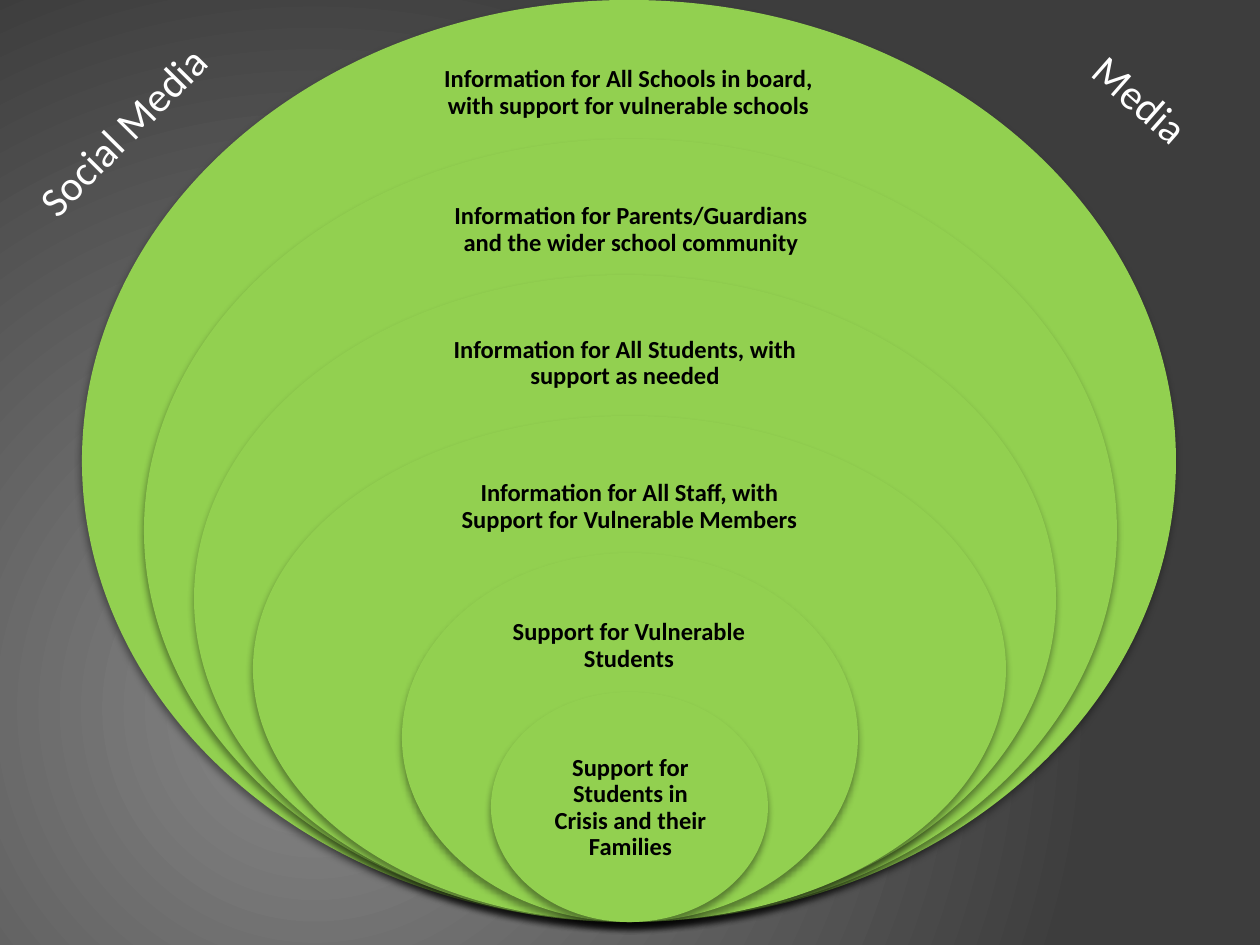
from dataclasses import dataclass

from lxml.etree import SubElement
from pptx import Presentation
from pptx.dml.color import RGBColor
from pptx.enum.shapes import MSO_SHAPE
from pptx.enum.text import MSO_ANCHOR, PP_ALIGN
from pptx.oxml.ns import qn
from pptx.util import Pt

EMU_PER_PX = 914400 / 126


@dataclass(frozen=True)
class Theme:
    font: str = "Calibri"
    glow: str = "878787"
    backdrop: str = "3D3D3D"
    ring: str = "92D050"
    ring_text: str = "000000"
    side_text: str = "FFFFFF"
    shadow: str = "000000"
    ring_size: int = 14
    side_size: int = 24


def px(length):
    return round(length * EMU_PER_PX)


class SlideBuilder:
    def __init__(self, page, theme):
        self.page = page
        self.theme = theme

    def background(self):
        """Radial gradient glowing from the lower left."""
        fill = self.page.background.fill
        fill.gradient()
        colours = (self.theme.glow, self.theme.backdrop)
        for position, (stop, colour) in enumerate(zip(fill.gradient_stops, colours)):
            stop.position = position
            stop.color.rgb = RGBColor.from_string(colour)
        gradient = next(self.page.element.iter(qn("a:gradFill")))
        gradient.remove(gradient.find(qn("a:lin")))
        circle = SubElement(gradient, qn("a:path"), path="circle")
        SubElement(circle, qn("a:fillToRect"), l="50000", t="100000", r="100000", b="50000")

    def ring(self, left, top, width, height):
        ellipse = self.page.shapes.add_shape(
            MSO_SHAPE.OVAL, px(left), px(top), px(width), px(height))
        ellipse.fill.solid()
        ellipse.fill.fore_color.rgb = RGBColor.from_string(self.theme.ring)
        ellipse.line.fill.background()
        ellipse.shadow.inherit = False
        effects = ellipse.element.spPr.find(qn("a:effectLst"))
        shadow = SubElement(effects, qn("a:outerShdw"), blurRad=str(Pt(4)),
                            dist=str(Pt(3.3)), dir="5400000", rotWithShape="0")
        colour = SubElement(shadow, qn("a:srgbClr"), val=self.theme.shadow)
        SubElement(colour, qn("a:alpha"), val="40000")

    def text(self, words, left, top, width, height, size, colour):
        box = self.page.shapes.add_textbox(px(left), px(top), px(width), px(height))
        box.text_frame.word_wrap = True
        para = box.text_frame.paragraphs[0]
        para.text = words
        para.font.name = self.theme.font
        para.font.size = Pt(size)
        para.font.color.rgb = RGBColor.from_string(colour)
        return box

    def ring_label(self, words, left, top, width, height):
        box = self.text(words, left, top, width, height,
                        self.theme.ring_size, self.theme.ring_text)
        frame = box.text_frame
        frame.vertical_anchor = MSO_ANCHOR.MIDDLE
        frame.margin_left = frame.margin_right = px(14)
        frame.margin_top = frame.margin_bottom = px(14)
        para = frame.paragraphs[0]
        para.alignment = PP_ALIGN.CENTER
        para.line_spacing = 0.9
        para.font.bold = True

    def side_label(self, words, left, top, width, height, rotation):
        box = self.text(words, left, top, width, height,
                        self.theme.side_size, self.theme.side_text)
        box.rotation = rotation


RINGS_BOTTOM = 922
# ring left, top, width; label left, top, width, height; words
RINGS = [
    ((82, 0, 1094), (423, 47, 411, 92),
     "Information for All Schools in board, with support for vulnerable schools"),
    ((144, 139, 973), (421, 184, 420, 92),
     "Information for Parents/Guardians and the wider school community"),
    ((194, 275, 862), (402, 319, 446, 89),
     "Information for All Students, with support as needed"),
    ((253, 416, 753), (426, 461, 407, 92),
     "Information for All Staff, with Support for Vulnerable Members"),
    ((402, 553, 456), (481, 600, 296, 92),
     "Support for Vulnerable Students"),
    ((491, 692, 277), (532, 750, 197, 116),
     "Support for Students in Crisis and their Families"),
]


def main():
    deck = Presentation()
    deck.slide_width, deck.slide_height = px(1260), px(945)
    builder = SlideBuilder(deck.slides.add_slide(deck.slide_layouts[6]), Theme())
    builder.background()
    for (left, top, width), label_area, words in RINGS:
        builder.ring(left, top, width, RINGS_BOTTOM - top)
        builder.ring_label(words, *label_area)
    builder.side_label("Media", 1066, 88, 197, 64, 41.3)
    builder.side_label("Social Media", -3, 88, 271, 64, 314.6)
    deck.save("out.pptx")


if __name__ == "__main__":
    main()
